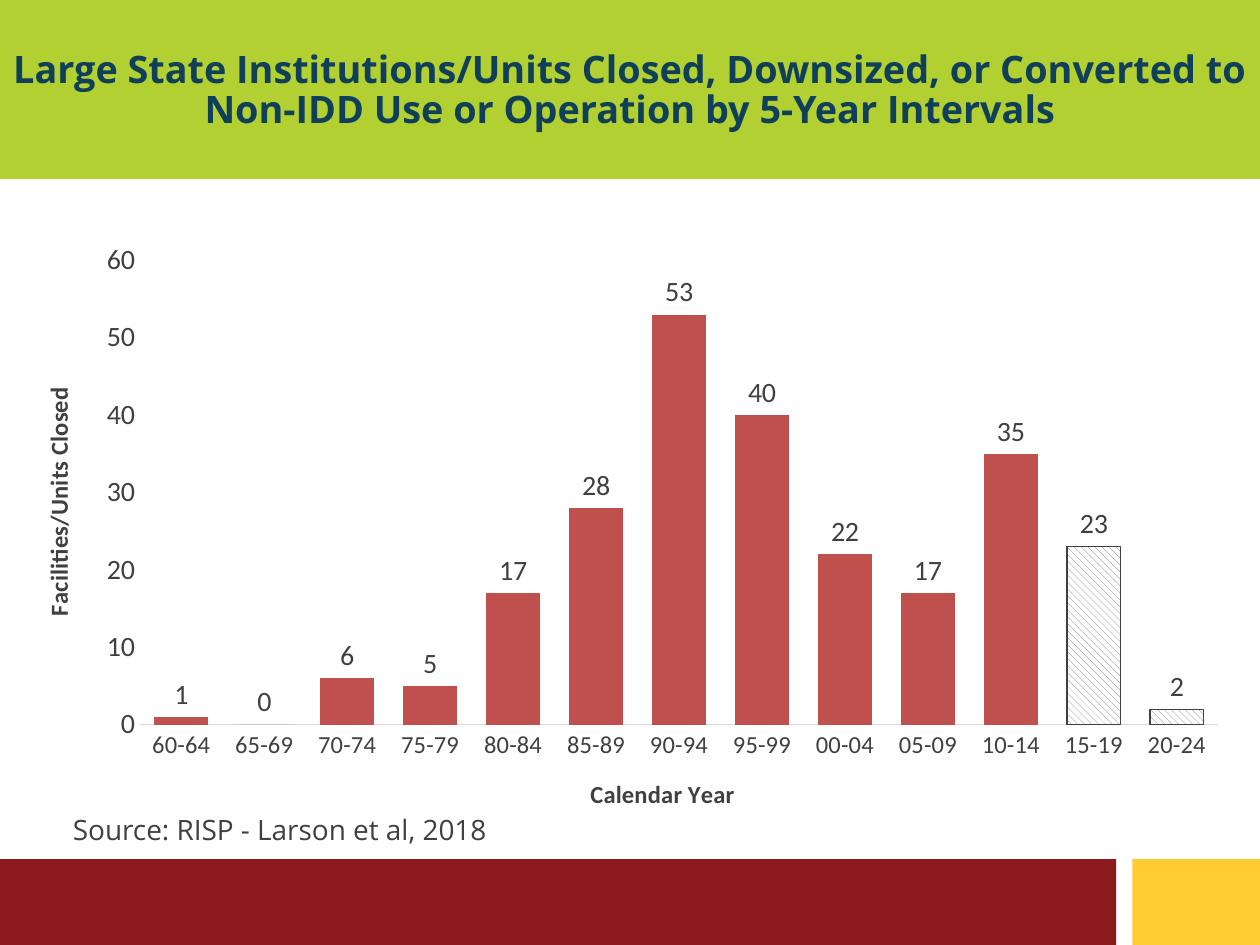
from dataclasses import dataclass

from lxml import etree
from pptx import Presentation
from pptx.chart.data import CategoryChartData
from pptx.dml.color import RGBColor
from pptx.enum.chart import XL_CHART_TYPE, XL_LABEL_POSITION, XL_TICK_MARK
from pptx.enum.dml import MSO_PATTERN
from pptx.enum.shapes import MSO_SHAPE
from pptx.enum.text import MSO_ANCHOR, MSO_AUTO_SIZE, PP_ALIGN
from pptx.oxml.ns import qn
from pptx.util import Cm, Pt

COLUMNS = XL_CHART_TYPE.COLUMN_CLUSTERED
OUTSIDE_END = XL_LABEL_POSITION.OUTSIDE_END
NO_TICK = XL_TICK_MARK.NONE
HATCH = MSO_PATTERN.WIDE_DOWNWARD_DIAGONAL
RECTANGLE = MSO_SHAPE.RECTANGLE
MIDDLE = MSO_ANCHOR.MIDDLE
NO_AUTOFIT = MSO_AUTO_SIZE.NONE
CENTER, LEFT = PP_ALIGN.CENTER, PP_ALIGN.LEFT

COLORS = {
    "green": "B3D033", "maroon": "8D1A1C", "gold": "FFCC33",
    "navy": "0F3F59", "gray": "404040", "axis": "D9D9D9",
    "bar": "C0504D", "hatch": "8064A2", "white": "FFFFFF",
}
HEADING_FONT, CHART_FONT = "Open Sans", "Calibri"
SLIDE_WIDTH, SLIDE_HEIGHT = 25.4, 19.05
FOOTER_TOP = 17.32

CLOSURES = {
    "60-64": 1, "65-69": 0, "70-74": 6, "75-79": 5, "80-84": 17,
    "85-89": 28, "90-94": 53, "95-99": 40, "00-04": 22, "05-09": 17,
    "10-14": 35, "15-19": 23, "20-24": 2,
}
HATCHED_INTERVALS = ("15-19", "20-24")
PLOT_AREA = {"x": 0.111, "y": 0.082, "w": 0.856, "h": 0.746}


@dataclass
class Band:
    left: float
    top: float
    width: float
    height: float
    color: str


BANDS = [
    Band(0, FOOTER_TOP, 22.5, SLIDE_HEIGHT - FOOTER_TOP, "maroon"),
    Band(0, 0, SLIDE_WIDTH, 3.61, "green"),
    Band(22.83, FOOTER_TOP, SLIDE_WIDTH - 22.83, SLIDE_HEIGHT - FOOTER_TOP, "gold"),
]


def rgb(name: str) -> RGBColor:
    return RGBColor.from_string(COLORS[name])


def style_font(font, size: float, color: str, name: str, bold: bool = False) -> None:
    font.size, font.name, font.bold = Pt(size), name, bold
    font.color.rgb = rgb(color)


def write_text(frame, text: str, *, size: float, color: str, font: str = HEADING_FONT,
               bold: bool = False, align=LEFT, line_spacing: float = 1.0) -> None:
    frame.word_wrap = True
    paragraph = frame.paragraphs[0]
    paragraph.alignment = align
    paragraph.line_spacing = line_spacing
    run = paragraph.add_run()
    run.text = text
    style_font(run.font, size, color, font, bold)


def draw_band(slide, band: Band) -> None:
    shape = slide.shapes.add_shape(
        RECTANGLE, Cm(band.left), Cm(band.top), Cm(band.width), Cm(band.height))
    shape.shadow.inherit = False
    shape.fill.solid()
    shape.fill.fore_color.rgb = rgb(band.color)
    shape.line.fill.background()


def place_title(slide, text: str) -> None:
    title = slide.shapes.title
    title.left, title.top = Cm(0), Cm(0.76)
    title.width, title.height = Cm(SLIDE_WIDTH), Cm(2.16)
    frame = title.text_frame
    frame.auto_size = NO_AUTOFIT
    frame.vertical_anchor = MIDDLE
    frame.margin_left = frame.margin_right = 0
    write_text(frame, text, size=21.6, color="navy", bold=True,
               align=CENTER, line_spacing=0.88)
    # Bring the title in front of the green band.
    slide.shapes._spTree.append(title._element)


def format_axis(axis, title: str, label_size: float) -> None:
    axis.has_major_gridlines = False
    axis.major_tick_mark = axis.minor_tick_mark = NO_TICK
    style_font(axis.tick_labels.font, label_size, "gray", CHART_FONT)
    write_text(axis.axis_title.text_frame, title, size=14, color="gray",
               font=CHART_FONT, bold=True, align=CENTER)


def fix_plot_area(chart) -> None:
    """Pin the inner plot area to fractions of the chart frame."""
    plot_area = chart._chartSpace.chart.plotArea
    for old_layout in plot_area.findall(qn("c:layout")):
        plot_area.remove(old_layout)
    layout = etree.Element(qn("c:layout"))
    manual = etree.SubElement(layout, qn("c:manualLayout"))
    settings = {"layoutTarget": "inner", "xMode": "edge", "yMode": "edge", **PLOT_AREA}
    for tag, value in settings.items():
        etree.SubElement(manual, qn(f"c:{tag}")).set("val", str(value))
    plot_area.insert(0, layout)


def add_closures_chart(slide) -> None:
    data = CategoryChartData()
    data.categories = list(CLOSURES)
    data.add_series("Series 1", list(CLOSURES.values()))
    chart = slide.shapes.add_chart(
        COLUMNS, Cm(0), Cm(4.22), Cm(SLIDE_WIDTH), Cm(12.55), data).chart
    style_font(chart.font, 16, "gray", CHART_FONT)
    chart.has_legend = chart.has_title = False
    fix_plot_area(chart)

    format_axis(chart.category_axis, "Calendar Year", 14)
    chart.category_axis.format.line.color.rgb = rgb("axis")
    chart.category_axis.format.line.width = Pt(0.75)
    count_axis = chart.value_axis
    format_axis(count_axis, "Facilities/Units Closed", 16)
    count_axis.format.line.fill.background()
    count_axis.minimum_scale, count_axis.maximum_scale = 0, 60
    count_axis.major_unit = 10

    plot = chart.plots[0]
    plot.vary_by_categories = False
    plot.gap_width, plot.overlap = 54, -27
    plot.has_data_labels = True
    plot.data_labels.show_value = True
    plot.data_labels.position = OUTSIDE_END
    style_font(plot.data_labels.font, 16, "gray", CHART_FONT)

    closures = plot.series[0]
    closures.invert_if_negative = False
    closures.format.fill.solid()
    closures.format.fill.fore_color.rgb = rgb("bar")
    for interval in HATCHED_INTERVALS:
        column = closures.points[list(CLOSURES).index(interval)].format
        column.fill.patterned()
        column.fill.pattern = HATCH
        column.fill.fore_color.rgb = rgb("hatch")
        column.fill.back_color.rgb = rgb("white")
        column.line.color.rgb = rgb("gray")
        column.line.width = Pt(0.75)


def main() -> None:
    deck = Presentation()
    deck.slide_width, deck.slide_height = Cm(SLIDE_WIDTH), Cm(SLIDE_HEIGHT)
    slide = deck.slides.add_slide(deck.slide_layouts.get_by_name("Title Only"))
    for band in BANDS:
        draw_band(slide, band)
    place_title(slide, "Large State Institutions/Units Closed, Downsized, or Converted to "
                       "Non-IDD Use or Operation by 5-Year Intervals")
    add_closures_chart(slide)
    source = slide.shapes.add_textbox(Cm(1.22), Cm(16.26), Cm(10), Cm(1.19))
    write_text(source.text_frame, "Source: RISP - Larson et al, 2018", size=16, color="gray")
    deck.save("out.pptx")


if __name__ == "__main__":
    main()
